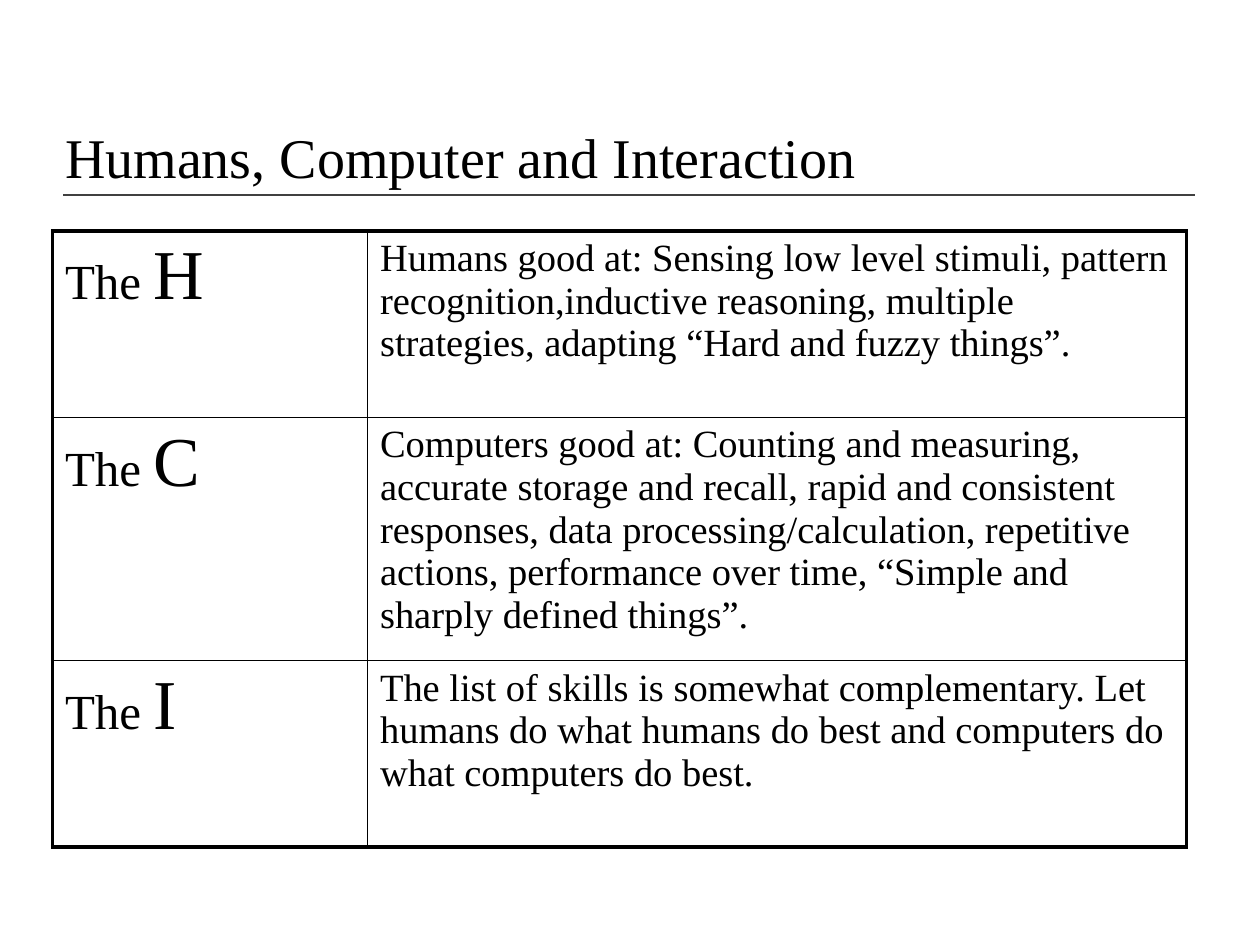
import pptx
import pptx.util
import pptx.dml.color
import pptx.enum.shapes
import pptx.enum.text
import pptx.oxml
import pptx.oxml.ns

Pt = pptx.util.Pt
COLORS = {"ink": "000000", "rule": "404040"}
ROWS = [
    ("H", 106.5, "Humans good at: Sensing low level stimuli, pattern "
     "recognition,inductive reasoning, multiple strategies, adapting "
     "“Hard and fuzzy things”."),
    ("C", 139, "Computers good at: Counting and measuring, accurate storage "
     "and recall, rapid and consistent responses, data "
     "processing/calculation, repetitive actions, performance over time, "
     "“Simple and sharply defined things”."),
    ("I", 106.5, "The list of skills is somewhat complementary. Let humans do "
     "what humans do best and computers do what computers do best."),
]


class Deck:
    face = "Times New Roman"
    thick, thin = 2.25, 1

    def __init__(self, wide, high):
        self.show = pptx.Presentation()
        self.show.slide_width, self.show.slide_height = Pt(wide), Pt(high)
        self.slide = self.show.slides.add_slide(self.show.slide_layouts[5])

    def color(self, name):
        return pptx.dml.color.RGBColor.from_string(COLORS[name])

    def style(self, font, size=None):
        font.name = self.face
        font.color.rgb = self.color("ink")
        if size:
            font.size = Pt(size)

    def title(self, text, box, size):
        shape = self.slide.shapes.title
        shape.left, shape.top, shape.width, shape.height = map(Pt, box)
        frame = shape.text_frame
        frame.text = text
        frame.word_wrap = True
        frame.auto_size = pptx.enum.text.MSO_AUTO_SIZE.NONE
        frame.vertical_anchor = pptx.enum.text.MSO_ANCHOR.BOTTOM
        para = frame.paragraphs[0]
        para.alignment = pptx.enum.text.PP_ALIGN.LEFT
        self.style(para.font, size)

    def rule(self, left, right, top):
        line = self.slide.shapes.add_connector(
            pptx.enum.shapes.MSO_CONNECTOR.STRAIGHT,
            Pt(left), Pt(top), Pt(right), Pt(top))
        line.line.color.rgb = self.color("rule")
        line.line.width = Pt(1)
        props = line._element.spPr
        props.append(props.makeelement(pptx.oxml.ns.qn("a:effectLst"), {}))

    def edge(self, cell, side, width):
        cell._tc.get_or_add_tcPr().append(pptx.oxml.parse_xml(
            f'<a:ln{side} {pptx.oxml.ns.nsdecls("a")} w="{Pt(width)}">'
            f'<a:solidFill><a:srgbClr val="{COLORS["ink"]}"/></a:solidFill>'
            f'</a:ln{side}>'))

    def cell(self, cell, outer, parts):
        for side in "LRTB":
            self.edge(cell, side, self.thick if side in outer else self.thin)
        cell.fill.background()
        para = cell.text_frame.paragraphs[0]
        self.style(para.font)
        for text, size in parts:
            run = para.add_run()
            run.text = text
            self.style(run.font, size)

    def table(self, left, top, cols, rows):
        high = sum(row[1] for row in rows)
        grid = self.slide.shapes.add_table(
            len(rows), len(cols), Pt(left), Pt(top),
            Pt(sum(cols)), Pt(high)).table
        grid.first_row = grid.horz_banding = False
        for col, width in zip(grid.columns, cols):
            col.width = Pt(width)
        for num, (key, height, text) in enumerate(rows):
            grid.rows[num].height = Pt(height)
            ends = "T" * (num == 0) + "B" * (num == len(rows) - 1)
            self.cell(grid.cell(num, 0), "L" + ends, [("The ", 28), (key, 40)])
            self.cell(grid.cell(num, 1), "R" + ends, [(text, 22)])


def main():
    deck = Deck(720, 540)
    deck.rule(36, 683, 111.5)
    deck.title("Humans, Computer and Interaction", (30, 66, 600, 46), 32)
    deck.table(30, 132, (180, 468), ROWS)
    deck.show.save("out.pptx")


if __name__ == "__main__":
    main()
